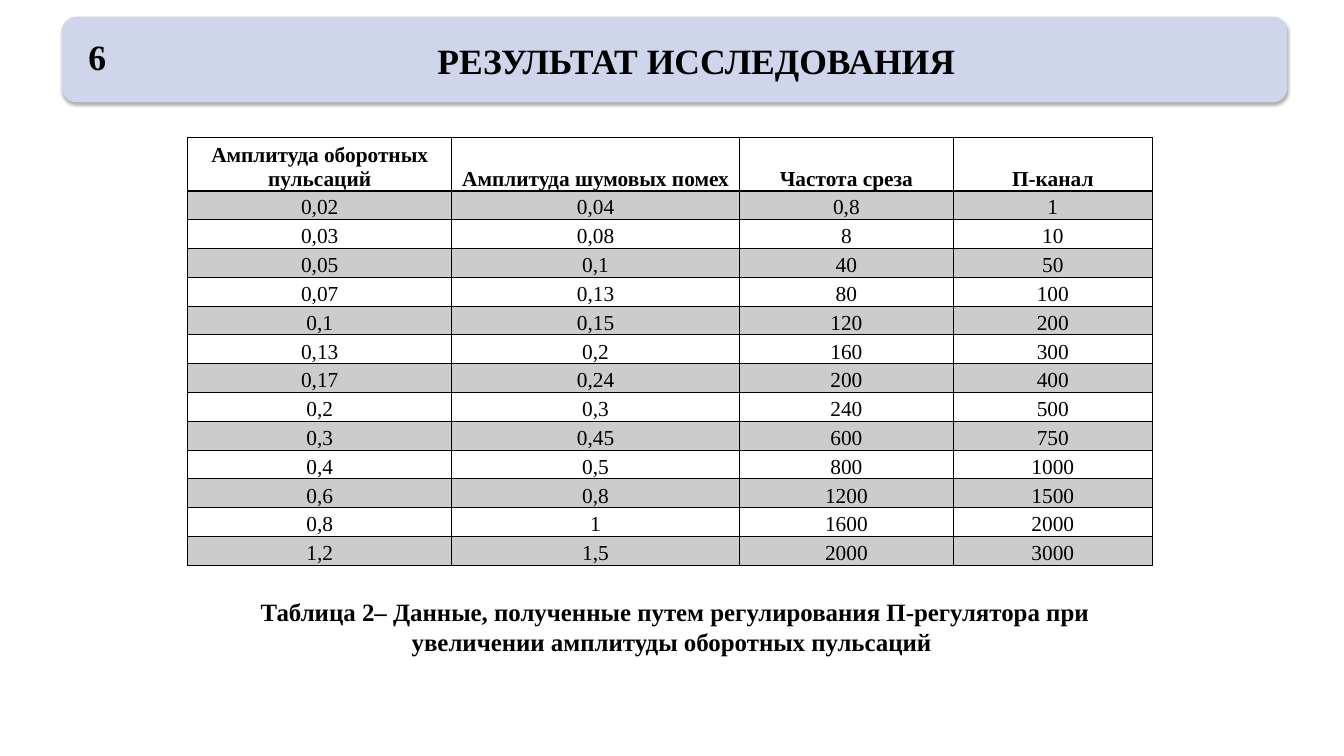
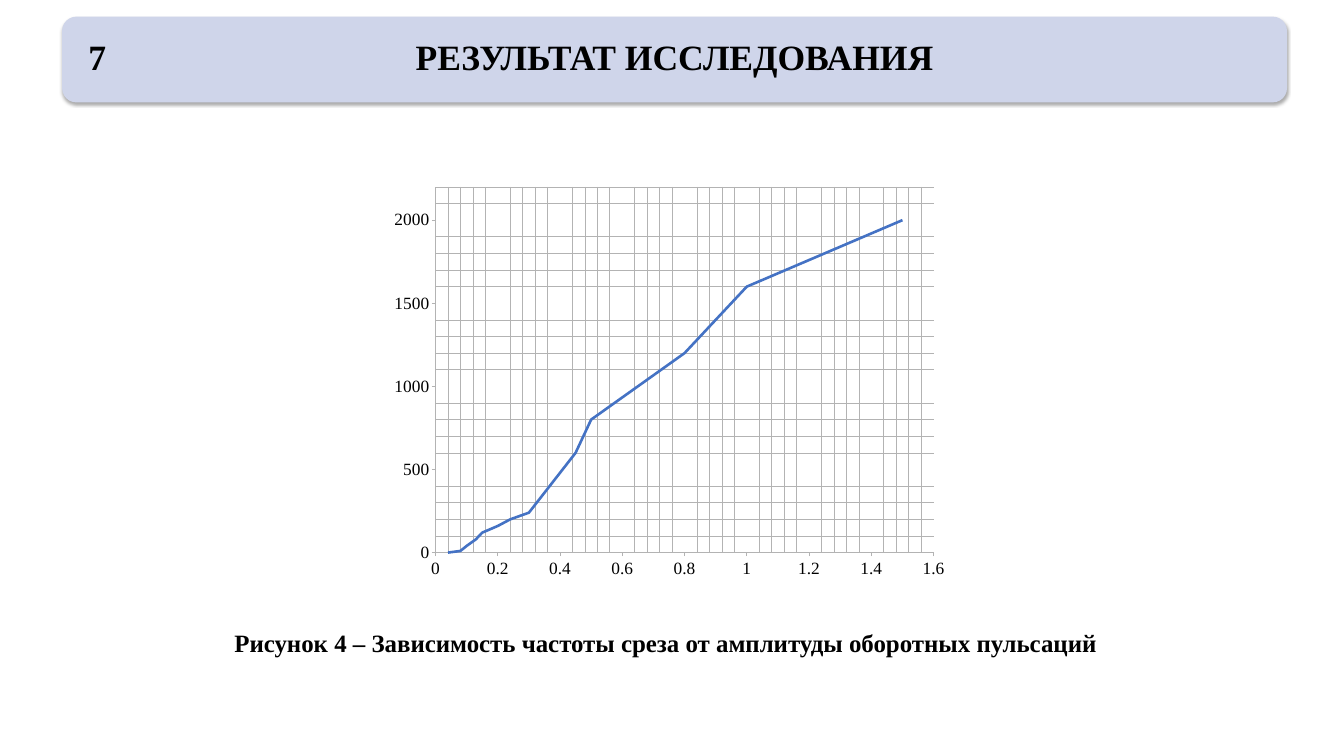
from dataclasses import dataclass

from lxml import etree
from pptx import Presentation
from pptx import util as u
from pptx.chart.data import XyChartData
from pptx.dml.color import RGBColor
from pptx.enum import chart as ch, shapes, text
from pptx.oxml import parse_xml
from pptx.oxml.ns import nsdecls, qn


@dataclass(frozen=True)
class Theme:
    font: str = "Times New Roman"
    ink: str = "000000"
    band: str = "CFD5EA"
    curve: str = "4472C4"
    grid: str = "B3B3B3"
    stripe_alpha: int = 20
    title: int = 40
    caption: int = 28
    cell: int = 24
    axis: int = 20


THEME = Theme()
TITLE = "РЕЗУЛЬТАТ ИССЛЕДОВАНИЯ"
BAND_BOX = (0.97, 0.26, 19.14, 1.34)
HEADINGS = ("Амплитуда оборотных пульсаций", "Амплитуда шумовых помех",
            "Частота среза", "П-канал")
COLUMN_WIDTHS = (4.13, 4.49, 3.35, 3.1)
READINGS = (
    (0.02, 0.04, 0.8, 1),
    (0.03, 0.08, 8, 10),
    (0.05, 0.1, 40, 50),
    (0.07, 0.13, 80, 100),
    (0.1, 0.15, 120, 200),
    (0.13, 0.2, 160, 300),
    (0.17, 0.24, 200, 400),
    (0.2, 0.3, 240, 500),
    (0.3, 0.45, 600, 750),
    (0.4, 0.5, 800, 1000),
    (0.6, 0.8, 1200, 1500),
    (0.8, 1, 1600, 2000),
    (1.2, 1.5, 2000, 3000),
)
CUTOFF_CURVE = (0, 10, *(reading[2] for reading in READINGS[2:]))


def apply(target, **values):
    for name, value in values.items():
        setattr(target, name, value)


def inches(box):
    return [u.Inches(length) for length in box]


def style_font(font, size, bold=False):
    apply(font, name=THEME.font, size=u.Pt(size), bold=bold)
    font.color.rgb = RGBColor.from_string(THEME.ink)


def write(paragraph, words, size, bold=True, **spacing):
    apply(paragraph, alignment=text.PP_ALIGN.CENTER, **spacing)
    run = paragraph.add_run()
    run.text = words
    style_font(run.font, size, bold)


def add_label(slide, box, words, size, anchor, indent=0, **spacing):
    frame = slide.shapes.add_textbox(*inches(box)).text_frame
    apply(frame, word_wrap=True, vertical_anchor=anchor)
    paragraph = frame.paragraphs[0]
    write(paragraph, words, size, **spacing)
    if indent:
        paragraph._p.get_or_add_pPr().set("indent", str(u.Inches(indent)))


def add_header(slide, number, title_box):
    left, top, _, _ = BAND_BOX
    band = slide.shapes.add_shape(
        shapes.MSO_SHAPE.ROUNDED_RECTANGLE, *inches(BAND_BOX))
    band.fill.solid()
    band.fill.fore_color.rgb = RGBColor.from_string(THEME.band)
    band.line.fill.background()
    band.shadow.inherit = False
    band._element.spPr.find(qn("a:effectLst")).append(parse_xml(
        f'<a:outerShdw {nsdecls("a")} blurRad="{u.Pt(3.5)}" dist="{u.Pt(2.2)}"'
        ' dir="5400000" algn="ctr" rotWithShape="0">'
        f'<a:srgbClr val="{THEME.ink}"><a:alpha val="32000"/></a:srgbClr>'
        '</a:outerShdw>'))
    number_box = (left, top + 0.2, 1.1, 0.93)
    for box, words in ((title_box, TITLE), (number_box, str(number))):
        add_label(slide, box, words, THEME.title, text.MSO_ANCHOR.MIDDLE,
                  line_spacing=0.9)


def add_caption(slide, box, words, **layout):
    add_label(slide, box, words, THEME.caption, text.MSO_ANCHOR.TOP, **layout)


def add_borders(cell, widths):
    """Draw the cell's left, right, top and bottom lines; must precede its fill."""
    properties = cell._tc.get_or_add_tcPr()
    for side, width in zip("LRTB", widths):
        properties.append(parse_xml(
            f'<a:ln{side} {nsdecls("a")} w="{u.Pt(width)}"><a:solidFill>'
            f'<a:srgbClr val="{THEME.ink}"/></a:solidFill></a:ln{side}>'))


def fill_cell(cell, striped):
    if not striped:
        cell.fill.background()
        return
    cell.fill.solid()
    cell.fill.fore_color.rgb = RGBColor.from_string(THEME.ink)
    shade = cell._tc.tcPr.find(qn("a:solidFill")).find(qn("a:srgbClr"))
    etree.SubElement(shade, qn("a:alpha")).set(
        "val", str(THEME.stripe_alpha * 1000))


def add_readings_table(slide, box):
    rows = [HEADINGS] + [[str(value).replace(".", ",") for value in reading]
                         for reading in READINGS]
    table = slide.shapes.add_table(
        len(rows), len(HEADINGS), *inches(box)).table
    apply(table, first_row=False, horz_banding=False)
    for column, width in zip(table.columns, COLUMN_WIDTHS):
        column.width = u.Inches(width)
    margin = u.Inches(0.01)
    for r, words in enumerate(rows):
        heading = r == 0
        table.rows[r].height = u.Inches(0.84 if heading else 0.45)
        for c, word in enumerate(words):
            cell = table.cell(r, c)
            apply(cell, margin_left=margin, margin_right=margin,
                  margin_top=margin, margin_bottom=0,
                  vertical_anchor=text.MSO_ANCHOR.BOTTOM)
            write(cell.text_frame.paragraphs[0], word, THEME.cell, heading)
            add_borders(cell, (1, 1, 2 if r == 1 else 1, 2 if heading else 1))
            fill_cell(cell, striped=r % 2 == 1)


def set_plot_area(chart, **fractions):
    modes = '<c:xMode val="edge"/><c:yMode val="edge"/>'
    sizes = "".join(f'<c:{key} val="{value}"/>'
                    for key, value in fractions.items())
    plot_area = chart._chartSpace.chart.plotArea
    for layout in plot_area.findall(qn("c:layout")):
        plot_area.remove(layout)
    plot_area.insert(0, parse_xml(
        f'<c:layout {nsdecls("c")}><c:manualLayout>'
        f'<c:layoutTarget val="inner"/>{modes}{sizes}'
        '</c:manualLayout></c:layout>'))


def add_minor_grid(axis):
    axis.has_minor_gridlines = True
    axis._element.find(qn("c:minorGridlines")).append(parse_xml(
        f'<c:spPr {nsdecls("c", "a")}><a:ln w="{u.Pt(0.75)}"><a:solidFill>'
        f'<a:srgbClr val="{THEME.grid}"/></a:solidFill></a:ln></c:spPr>'))


def add_cutoff_chart(slide, box):
    data = XyChartData()
    points = data.add_series("Series 1")
    for reading, cutoff in zip(READINGS, CUTOFF_CURVE):
        points.add_data_point(reading[1], cutoff)
    chart = slide.shapes.add_chart(
        ch.XL_CHART_TYPE.XY_SCATTER_LINES_NO_MARKERS, *inches(box), data).chart
    apply(chart, has_legend=False, has_title=False)
    chart.plots[0].vary_by_categories = False
    curve = chart.plots[0].series[0]
    curve.smooth = False
    curve.marker.style = ch.XL_MARKER_STYLE.NONE
    curve.format.line.width = u.Pt(3)
    curve.format.line.color.rgb = RGBColor.from_string(THEME.curve)
    for axis, top, step in ((chart.category_axis, 1.6, 0.2),
                            (chart.value_axis, 2200, 500)):
        apply(axis, minimum_scale=0, maximum_scale=top, major_unit=step,
              minor_unit=round(step / 5, 2), has_major_gridlines=False,
              major_tick_mark=ch.XL_TICK_MARK.OUTSIDE,
              minor_tick_mark=ch.XL_TICK_MARK.NONE)
        apply(axis.tick_labels, number_format="General",
              number_format_is_linked=False)
        style_font(axis.tick_labels.font, THEME.axis)
        axis.format.line.width = u.Pt(0.75)
        axis.format.line.color.rgb = RGBColor.from_string(THEME.grid)
        add_minor_grid(axis)
    set_plot_area(chart, x=0.05, y=0.02, w=0.91, h=0.95)


def build_table_slide(slide):
    add_header(slide, 6, (4.29, 0.26, 13.18, 1.45))
    add_readings_table(slide, (2.93, 2.14, sum(COLUMN_WIDTHS), 6.66))
    add_caption(slide, (3.49, 9.27, 14.1, 1.04),
                "Таблица 2– Данные, полученные путем регулирования "
                "П-регулятора при увеличении амплитуды оборотных пульсаций ")


def build_chart_slide(slide):
    add_header(slide, 7, (1.01, 0.2, 19.06, 1.45))
    add_caption(slide, (2.71, 9.68, 14.98, 0.6),
                "Рисунок 4 – Зависимость частоты среза от амплитуды "
                "оборотных пульсаций ",
                indent=0.49, line_spacing=1.15,
                space_before=u.Pt(12), space_after=u.Pt(6))
    add_cutoff_chart(slide, (6.16, 2.8, 8.77, 6.23))


def main():
    deck = Presentation()
    apply(deck, slide_width=u.Inches(21), slide_height=u.Inches(11.81))
    for build in (build_table_slide, build_chart_slide):
        build(deck.slides.add_slide(deck.slide_layouts[6]))
    deck.save("out.pptx")


if __name__ == "__main__":
    main()
